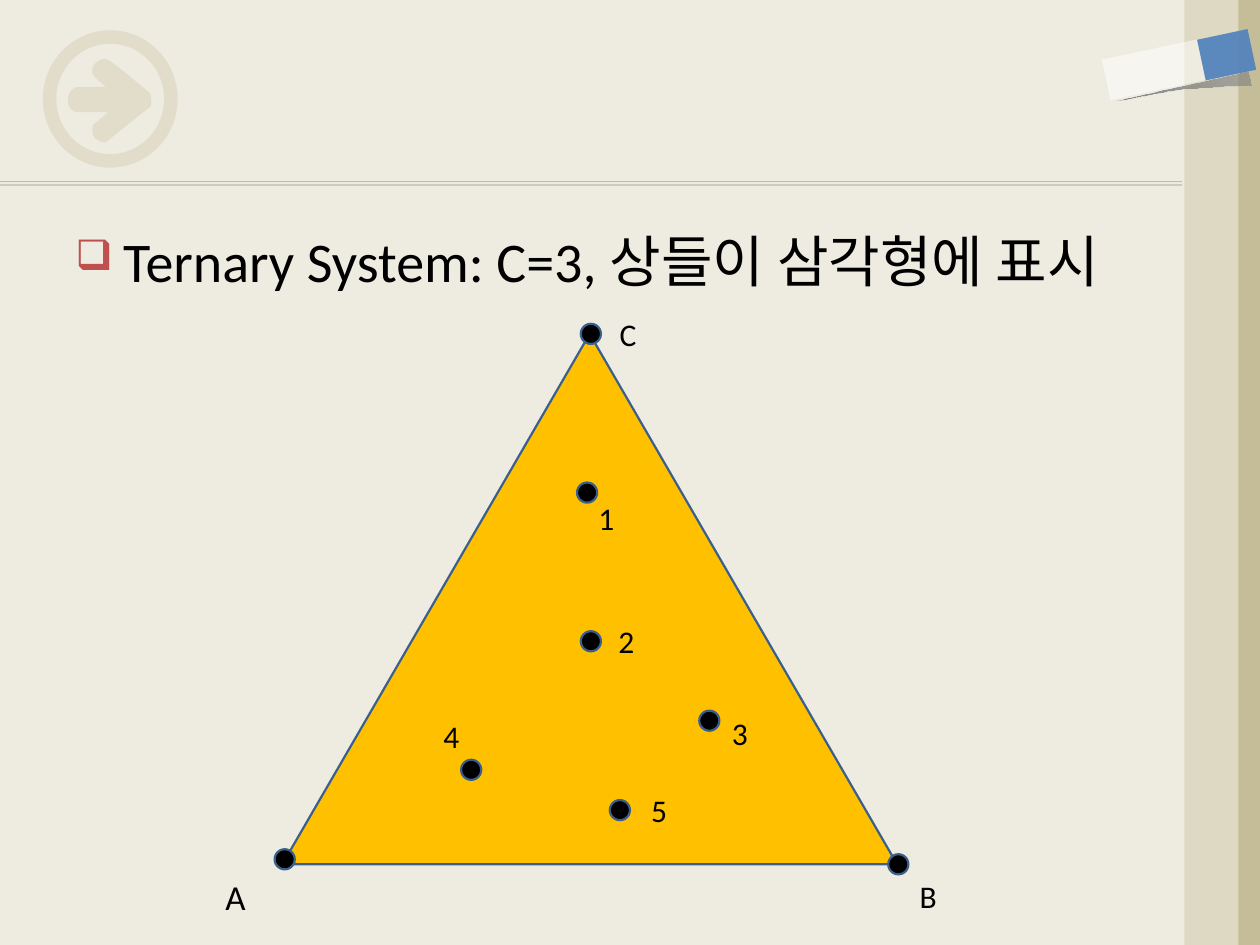
"""Build the ternary system slide: a composition triangle with numbered points."""
from dataclasses import dataclass

from lxml import etree
from pptx import Presentation
from pptx import util as u
from pptx.dml.color import RGBColor
from pptx.enum import shapes, text
from pptx.oxml import parse_xml
from pptx.oxml.ns import nsdecls, qn

MSO = shapes.MSO_SHAPE


@dataclass(frozen=True)
class Theme:
    font: str = "Calibri"
    body: int = 32
    large: int = 20
    label: int = 18
    paper: str = "EEECE1"
    tan: str = "C4BD97"
    sand: str = "DDD9C3"
    blue: str = "4F81BD"
    edge: str = "3A5F8C"
    gold: str = "FFC000"
    red: str = "C0504D"
    gray: str = "808080"
    white: str = "FFFFFF"
    black: str = "000000"


def write(tf, content, *, font, size, color):
    p = tf.paragraphs[0]
    r = p.add_run()
    r.text = content
    r.font.name = font
    r.font.size = u.Pt(size)
    r.font.color.rgb = RGBColor.from_string(color)
    return p


def bezier(start, c1, c2, end, steps=8):
    for i in range(1, steps + 1):
        t = i / steps
        w = ((1 - t) ** 3, 3 * t * (1 - t) ** 2, 3 * t * t * (1 - t), t ** 3)
        yield tuple(sum(k * pt[axis] for k, pt in zip(w, (start, c1, c2, end)))
                    for axis in (0, 1))


class SlideBuilder:
    def __init__(self, s, theme):
        self.s, self.theme = s, theme
        s.background.fill.solid()
        s.background.fill.fore_color.rgb = RGBColor.from_string(theme.paper)

    def paint(self, sp, fill, alpha=100, line=None):
        sp.shadow.inherit = False
        sp.fill.solid()
        sp.fill.fore_color.rgb = RGBColor.from_string(fill)
        if alpha < 100:
            clr = sp._element.spPr.find(qn("a:solidFill"))[0]
            etree.SubElement(clr, qn("a:alpha")).set("val", str(alpha * 1000))
        if line:
            sp.line.color.rgb = RGBColor.from_string(line)
            sp.line.width = u.Pt(1.25)
        else:
            sp.line.fill.background()
        return sp

    def shape(self, kind, box, fill, alpha=100, line=None, rotation=0):
        sp = self.s.shapes.add_shape(kind, *map(u.Inches, box))
        sp.rotation = rotation
        return self.paint(sp, fill, alpha, line)

    def outline(self, start, segments, fill, alpha=100):
        points, last = [], start
        for seg in segments:
            points += bezier(last, *seg) if len(seg) == 3 else seg
            last = seg[-1]
        fb = self.s.shapes.build_freeform(*map(u.Inches, start))
        fb.add_line_segments([tuple(map(u.Inches, pt)) for pt in points])
        return self.paint(fb.convert_to_shape(), fill, alpha)

    def fade(self, sp, color, alpha):
        old = sp._element.spPr.find(qn("a:solidFill"))
        old.getparent().replace(old, parse_xml(
            f'<a:gradFill {nsdecls("a")} rotWithShape="1"><a:gsLst>'
            f'<a:gs pos="0"><a:srgbClr val="{color}"/></a:gs>'
            f'<a:gs pos="100000"><a:srgbClr val="{color}">'
            f'<a:alpha val="{alpha * 1000}"/></a:srgbClr></a:gs></a:gsLst>'
            '<a:path path="circle"><a:fillToRect t="100000" r="100000"/></a:path>'
            '</a:gradFill>'))

    def rule(self, y, right):
        ln = self.s.shapes.add_connector(shapes.MSO_CONNECTOR.STRAIGHT, 0, u.Inches(y),
                                         u.Inches(right), u.Inches(y))
        ln.line.color.rgb = RGBColor.from_string(self.theme.tan)
        ln.line.width = u.Pt(0.75)
        ln._element.spPr.append(parse_xml(
            f'<a:effectLst {nsdecls("a")}><a:outerShdw blurRad="0" dist="{u.Pt(2)}" '
            f'dir="5400000"><a:srgbClr val="{self.theme.black}"><a:alpha val="22000"/>'
            '</a:srgbClr></a:outerShdw></a:effectLst>'))

    def dot(self, x, y, size=0.16):
        box = (x - size / 2, y - size / 2, size, size)
        self.shape(MSO.OVAL, box, self.theme.black, line=self.theme.edge)

    def label(self, content, box, size):
        tf = self.s.shapes.add_textbox(*map(u.Inches, box)).text_frame
        tf.word_wrap = False
        tf.auto_size = text.MSO_AUTO_SIZE.SHAPE_TO_FIT_TEXT
        write(tf, content, font=self.theme.font, size=size, color=self.theme.black)

    def bullet(self, content, box):
        th = self.theme
        tf = self.s.shapes.add_textbox(*map(u.Inches, box)).text_frame
        tf.word_wrap = True
        p = write(tf, content, font=th.font, size=th.body, color=th.black)
        p.space_before = u.Pt(0.2 * th.body)
        pPr = p._p.get_or_add_pPr()
        pPr.set("marL", str(u.Inches(0.38)))
        pPr.set("indent", str(u.Inches(-0.38)))
        for xml in (f'<a:buClr {nsdecls("a")}><a:srgbClr val="{th.red}"/></a:buClr>',
                    f'<a:buSzPct {nsdecls("a")} val="75000"/>',
                    f'<a:buChar {nsdecls("a")} char="❑"/>'):
            pPr.append(parse_xml(xml))


def draw_frame(b):
    th = b.theme
    b.rule(1.44, 9.38)
    b.outline((1.18, 0.73), [
        ((1.12, 0.68), (0.92, 0.51), (0.85, 0.47)),
        ((0.81, 0.46), (0.79, 0.48), (0.76, 0.5)),
        ((0.73, 0.52), (0.72, 0.57), (0.75, 0.61)),
        [(0.84, 0.69), ], [(0.61, 0.69)],
        ((0.55, 0.71), (0.54, 0.76), (0.54, 0.79)),
        ((0.53, 0.83), (0.56, 0.88), (0.61, 0.89)),
        [(0.86, 0.89)], [(0.74, 0.99)],
        ((0.73, 1.02), (0.73, 1.07), (0.75, 1.09)),
        ((0.77, 1.11), (0.8, 1.13), (0.84, 1.13)),
        ((1.01, 0.99), (1.19, 0.85), (1.19, 0.85)),
        ((1.21, 0.82), (1.2, 0.81), (1.2, 0.79)),
        ((1.2, 0.77), (1.2, 0.75), (1.18, 0.73))], th.tan, 30)
    ring = b.shape(MSO.DONUT, (0.34, 0.24, 1.07, 1.09), th.tan, 30)
    ring.adjustments[0] = 0.1
    b.shape(MSO.RECTANGLE, (9.41, 0, 0.59, 7.5), th.tan)
    b.shape(MSO.RECTANGLE, (9.4, 0, 0.43, 7.5), th.sand)
    curl = b.outline((9.9, 0.57), [
        [(9.93, 0.69)],
        ((9.28, 0.68), (9.15, 0.76), (8.85, 0.8)),
        ((9.2, 0.72), (9.55, 0.65), (9.9, 0.57))], th.gray)
    b.fade(curl, th.gray, 56)
    b.shape(MSO.RECTANGLE, (9.57, 0.23, 0.33, 0.41), th.blue, 90, rotation=78)
    b.shape(MSO.RECTANGLE, (8.99, 0.17, 0.33, 0.77), th.white, 50, rotation=78)


def draw_diagram(b):
    th = b.theme
    b.bullet("Ternary System: C=3, 상들이 삼각형에 표시", (0.5, 1.75, 8.87, 4.95))
    b.shape(MSO.ISOSCELES_TRIANGLE, (2.24, 2.65, 4.88, 4.21), th.gold, line=th.edge)
    points = [("4", (3.74, 6.11), (3.42, 5.64)), ("3", (5.63, 5.72), (5.71, 5.62)),
              ("2", (4.69, 5.09), (4.81, 4.89)), ("B", (7.13, 6.86), (7.2, 6.91)),
              ("C", (4.69, 2.65), (4.82, 2.45)), ("A", (2.26, 6.82), (1.69, 6.9)),
              ("1", (4.66, 3.91), (4.65, 3.91)), ("5", (4.92, 6.43), (5.07, 6.23))]
    for _, center, _ in points:
        b.dot(*center)
    for name, _, corner in points:
        size = th.large if name == "A" else th.label
        width = 0.33 if name.isdigit() else 0.02 * size
        b.label(name, (*corner, width, 0.022 * size), size)


def main():
    prs = Presentation()
    prs.slide_width, prs.slide_height = u.Inches(10), u.Inches(7.5)
    b = SlideBuilder(prs.slides.add_slide(prs.slide_layouts[6]), Theme())
    draw_frame(b)
    draw_diagram(b)
    prs.save("out.pptx")


if __name__ == "__main__":
    main()
